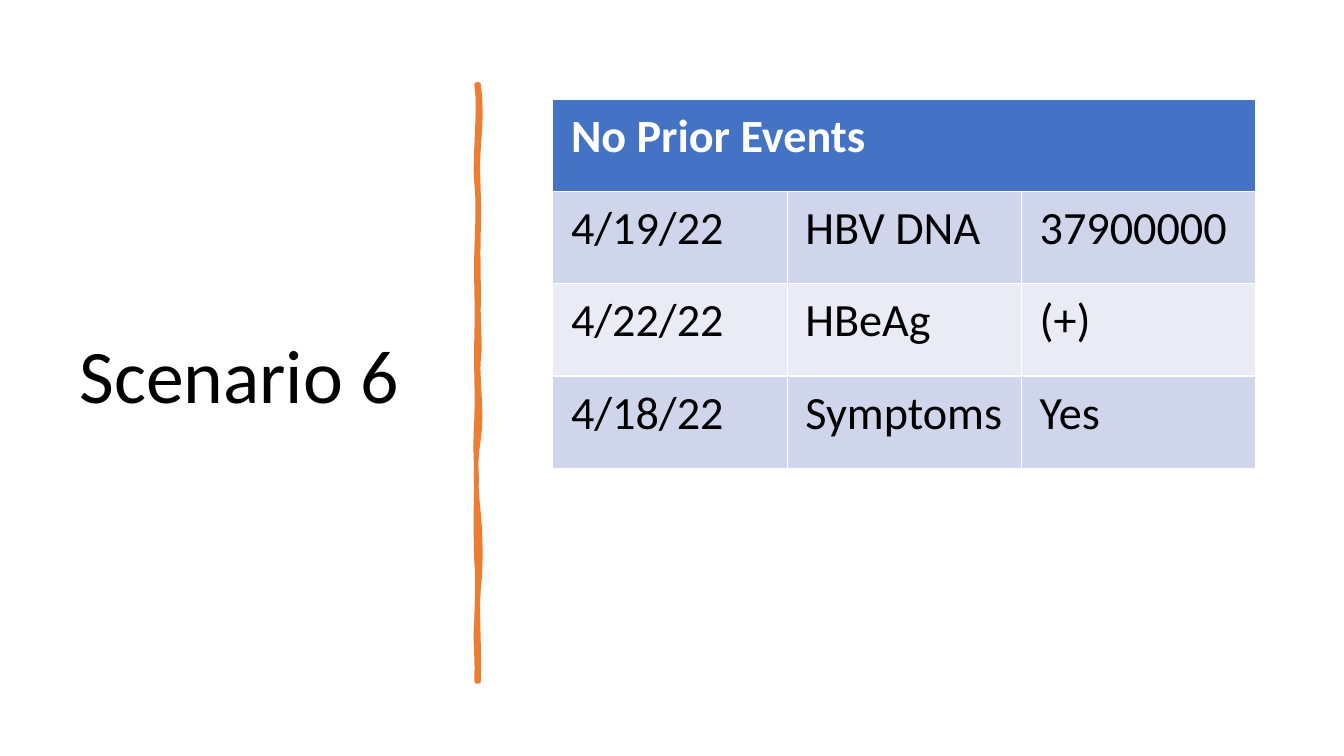
"""Build the Scenario 6 slide: title, hand-drawn divider and event table."""
from lxml import etree
from pptx import Presentation
from pptx import util as u
from pptx.dml.color import RGBColor
from pptx.enum import text
from pptx.oxml import ns

SCENARIO = "Scenario 6"
HEADING = "No Prior Events"
EVENTS = [
    ("4/19/22", "HBV DNA", "37900000"),
    ("4/22/22", "HBeAg", "(+)"),
    ("4/18/22", "Symptoms", "Yes"),
]
COLORS = {"text": "000000", "heading": "FFFFFF", "header": "4472C4",
          "odd": "CFD5EA", "even": "E9EBF5", "divider": "ED7D31"}
FONT = "Calibri"

DIVIDER_START = (12.06, 2.13)
DIVIDER_CURVES = [
    ((12.12, 2.59), (12.12, 3.02), (12.06, 3.71)),
    ((12.01, 4.39), (12.09, 4.95), (12.06, 5.74)),
    ((12.04, 6.53), (12.06, 6.65), (12.06, 7.47)),
    ((12.04, 8.26), (12.12, 8.69), (12.06, 9.04)),
    ((12.01, 9.4), (12.17, 10.52), (12.06, 11.07)),
    ((11.96, 11.61), (11.99, 12.29), (12.06, 12.95)),
    ((12.12, 13.61), (12.12, 14.33), (12.06, 14.83)),
    ((12.01, 15.32), (12.09, 16.51), (12.06, 17.17)),
    ((12.04, 17.17), (12.01, 17.17), (12.01, 17.17)),
    ((12.04, 16.41), (11.96, 16.36), (12.01, 15.57)),
    ((12.04, 14.81), (12.04, 14.48), (12.01, 14.15)),
    ((11.99, 13.82), (11.99, 12.57), (12.01, 12.12)),
    ((12.01, 11.66), (11.96, 11.4), (12.01, 10.54)),
    ((12.04, 9.8), (11.99, 9.47), (12.01, 8.51)),
    ((12.04, 7.57), (11.99, 7.14), (12.01, 6.35)),
    ((12.04, 5.54), (12.06, 5.08), (12.01, 4.6)),
    ((11.94, 4.14), (12.12, 2.64), (12.01, 2.13)),
]
STEPS = 6


def rgb(name):
    return RGBColor.from_string(COLORS[name])


def write(frame, words, size, color="text", bold=False, spacing=None):
    paragraph = frame.paragraphs[0]
    paragraph.alignment = text.PP_ALIGN.LEFT
    paragraph.line_spacing = spacing
    run = paragraph.add_run()
    run.text = words
    run.font.name = FONT
    run.font.size = u.Pt(size)
    run.font.bold = bold
    run.font.color.rgb = rgb(color)


def curve_points(start, curves):
    points = []
    for first, second, end in curves:
        for step in range(1, STEPS + 1):
            t = step / STEPS
            s = 1 - t
            points.append(tuple(
                u.Cm(s**3 * a + 3 * s * s * t * b + 3 * s * t * t * c + t**3 * d)
                for a, b, c, d in zip(start, first, second, end)))
        start = end
    return points


def add_title(slide):
    title = slide.shapes.title
    title.left, title.top, title.width, title.height = map(u.Cm, (1.75, 1.78, 9.5, 15.52))
    title.text_frame.auto_size = text.MSO_AUTO_SIZE.NONE
    title.text_frame.vertical_anchor = text.MSO_ANCHOR.MIDDLE
    write(title.text_frame, SCENARIO, 54, spacing=0.9)


def add_divider(slide):
    outline = slide.shapes.build_freeform(*map(u.Cm, DIVIDER_START))
    outline.add_line_segments(curve_points(DIVIDER_START, DIVIDER_CURVES), close=True)
    divider = outline.convert_to_shape()
    divider.shadow.inherit = False
    divider.fill.solid()
    divider.fill.fore_color.rgb = rgb("divider")
    divider.line.color.rgb = rgb("divider")
    divider.line.width = u.Pt(3.25)
    etree.SubElement(divider.line._get_or_add_ln(), ns.qn("a:round"))


def add_events(slide):
    rows = [(HEADING, "", "")] + EVENTS
    events = slide.shapes.add_table(len(rows), 3, *map(u.Cm, (13.93, 2.5, 17.72, 9.3))).table
    events.cell(0, 0).merge(events.cell(0, 2))
    for r, row in enumerate(rows):
        fill = "header" if r == 0 else "odd" if r % 2 else "even"
        for c, words in enumerate(row):
            cell = events.cell(r, c)
            cell.margin_left = cell.margin_right = u.Cm(0.46)
            cell.margin_top = cell.margin_bottom = u.Cm(0.23)
            cell.fill.solid()
            cell.fill.fore_color.rgb = rgb(fill)
            if words:
                write(cell.text_frame, words, 33, "text" if r else "heading", r == 0)


def main():
    deck = Presentation()
    deck.slide_width, deck.slide_height = u.Cm(33.87), u.Cm(19.05)
    slide = deck.slides.add_slide(deck.slide_layouts[5])
    add_title(slide)
    add_divider(slide)
    add_events(slide)
    deck.save("out.pptx")


if __name__ == "__main__":
    main()
